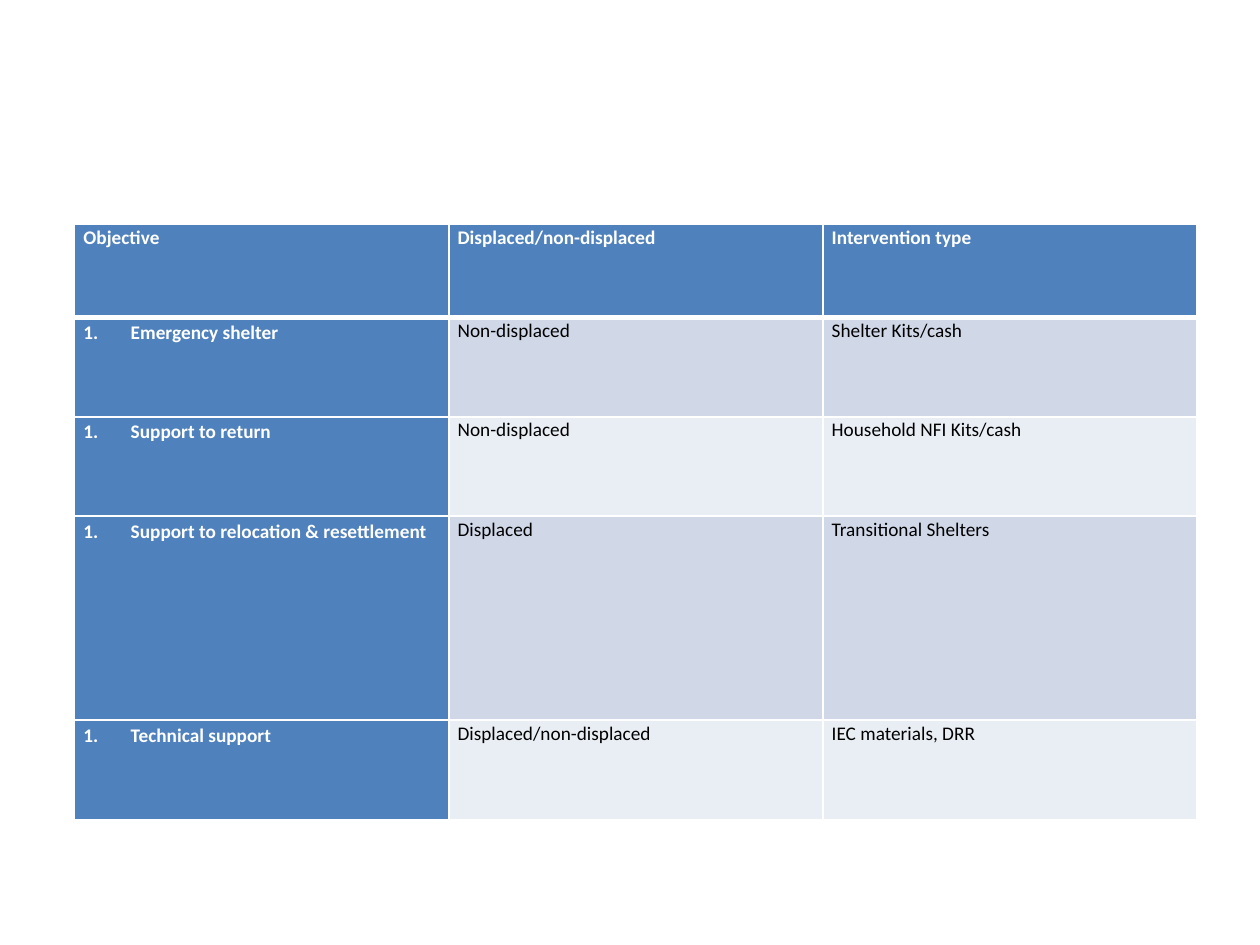
from dataclasses import dataclass

from lxml import etree
from pptx import Presentation
from pptx.dml.color import RGBColor
from pptx.enum.text import PP_ALIGN
from pptx.oxml.ns import qn
from pptx.util import Pt

JUSTIFY = PP_ALIGN.JUSTIFY
LEFT = PP_ALIGN.LEFT


@dataclass(frozen=True)
class Theme:
    font: str = "Calibri"
    size: float = 11
    white: str = "FFFFFF"
    black: str = "000000"
    head: str = "4F81BD"
    bands: tuple = ("D0D8E8", "E9EDF4")
    thin: float = 1
    thick: float = 3


THEME = Theme()

ROWS = [
    ("Objective", "Displaced/non-displaced", "Intervention type"),
    ("Emergency shelter", "Non-displaced", "Shelter Kits/cash"),
    ("Support to return", "Non-displaced", "Household NFI Kits/cash"),
    ("Support to relocation & resettlement", "Displaced", "Transitional Shelters"),
    ("Technical support", "Displaced/non-displaced", "IEC materials, DRR"),
]
HEIGHTS = [53.3, 56.7, 56.7, 116.6, 56.7]
WIDTH = 213.8
INDENT = 27


def set_edges(cell, top, bottom):
    """Draw white cell borders, with the given top and bottom widths."""
    props = cell._tc.get_or_add_tcPr()
    widths = {"L": THEME.thin, "R": THEME.thin, "T": top, "B": bottom}
    for spot, (side, width) in enumerate(widths.items()):
        line = etree.Element(qn(f"a:ln{side}"), w=str(Pt(width)))
        fill = etree.SubElement(line, qn("a:solidFill"))
        etree.SubElement(fill, qn("a:srgbClr"), val=THEME.white)
        props.insert(spot, line)


def add_number(para):
    """Give the paragraph a hanging automatic number."""
    props = para._p.get_or_add_pPr()
    props.set("marL", str(Pt(INDENT)))
    props.set("indent", str(-Pt(INDENT)))
    etree.SubElement(props, qn("a:buFont"), typeface="+mj-lt")
    etree.SubElement(props, qn("a:buAutoNum"), type="arabicPeriod")


prs = Presentation()
prs.slide_width, prs.slide_height = Pt(720), Pt(540)
slide = prs.slides.add_slide(prs.slide_layouts[6])

frame = slide.shapes.add_table(
    len(ROWS), 3, Pt(42.7), Pt(128.2), Pt(3 * WIDTH), Pt(sum(HEIGHTS))
)
table = frame.table
table.first_col = True
for col in table.columns:
    col.width = Pt(WIDTH)

for i, (texts, height) in enumerate(zip(ROWS, HEIGHTS)):
    table.rows[i].height = Pt(height)
    for j, text in enumerate(texts):
        cell = table.cell(i, j)
        strong = i == 0 or j == 0
        listed = i > 0 and j == 0

        cell.margin_left = cell.margin_right = Pt(5)
        cell.margin_top = cell.margin_bottom = 0
        cell.fill.solid()
        shade = THEME.head if strong else THEME.bands[(i - 1) % 2]
        cell.fill.fore_color.rgb = RGBColor.from_string(shade)
        set_edges(
            cell,
            top=THEME.thick if i == 1 else THEME.thin,
            bottom=THEME.thick if i == 0 else THEME.thin,
        )

        para = cell.text_frame.paragraphs[0]
        if listed:
            add_number(para)
        para.alignment = LEFT if listed and i > 2 else JUSTIFY
        para.line_spacing = 1.15 if listed else 1.07
        run = para.add_run()
        run.text = text
        run.font.name = THEME.font
        run.font.size = Pt(THEME.size)
        run.font.bold = strong
        ink = THEME.white if strong else THEME.black
        run.font.color.rgb = RGBColor.from_string(ink)

prs.save("out.pptx")
